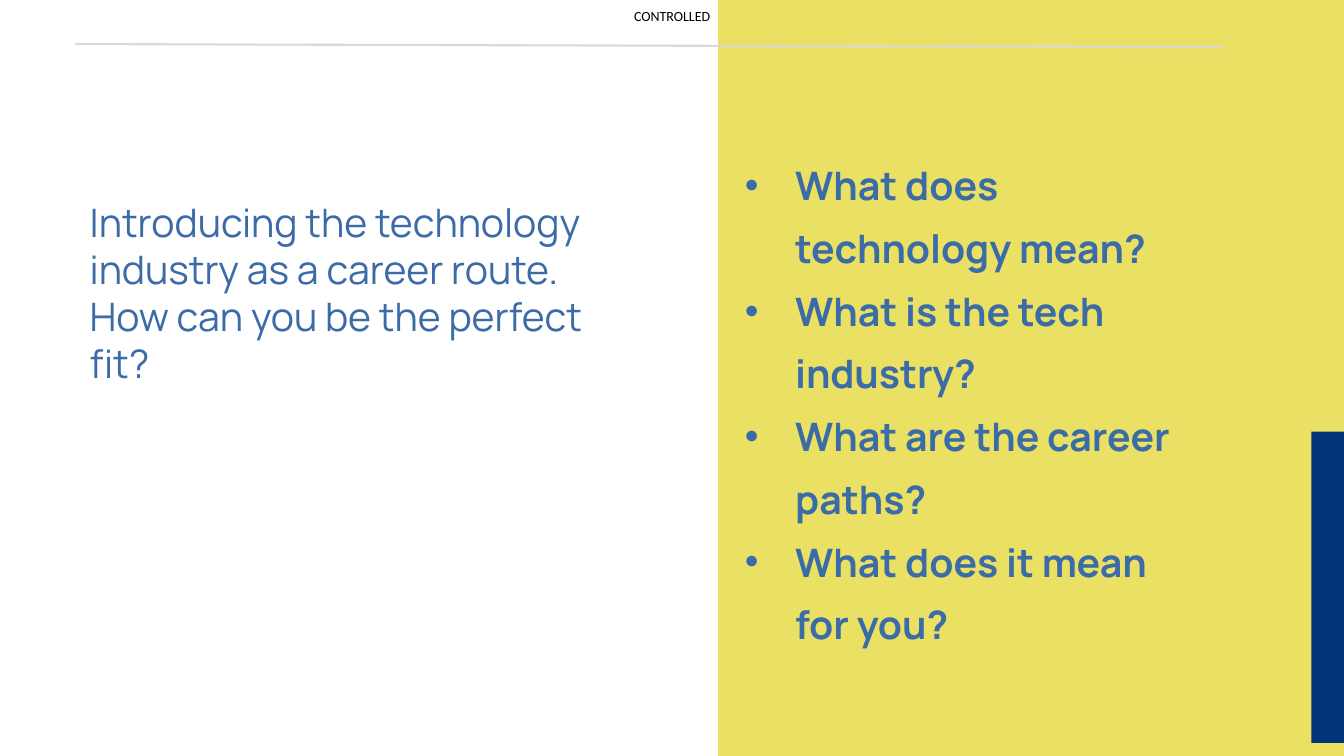
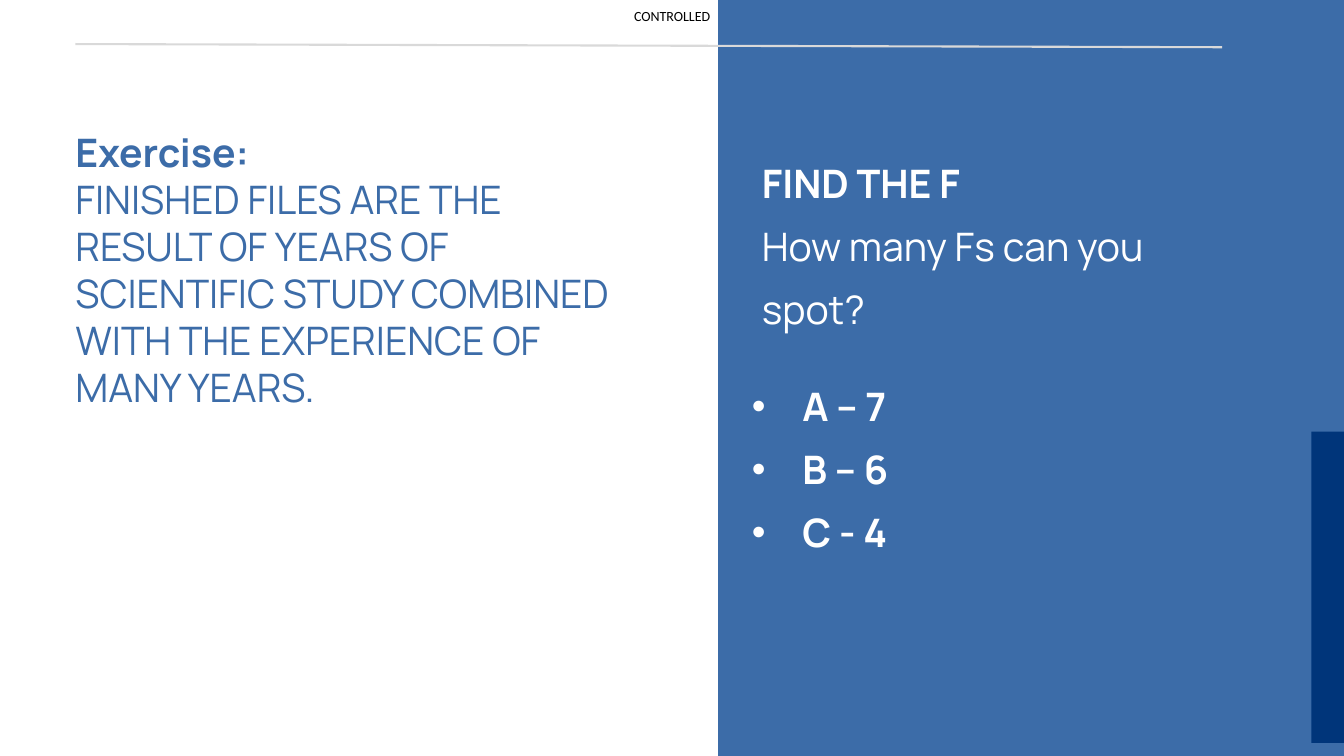
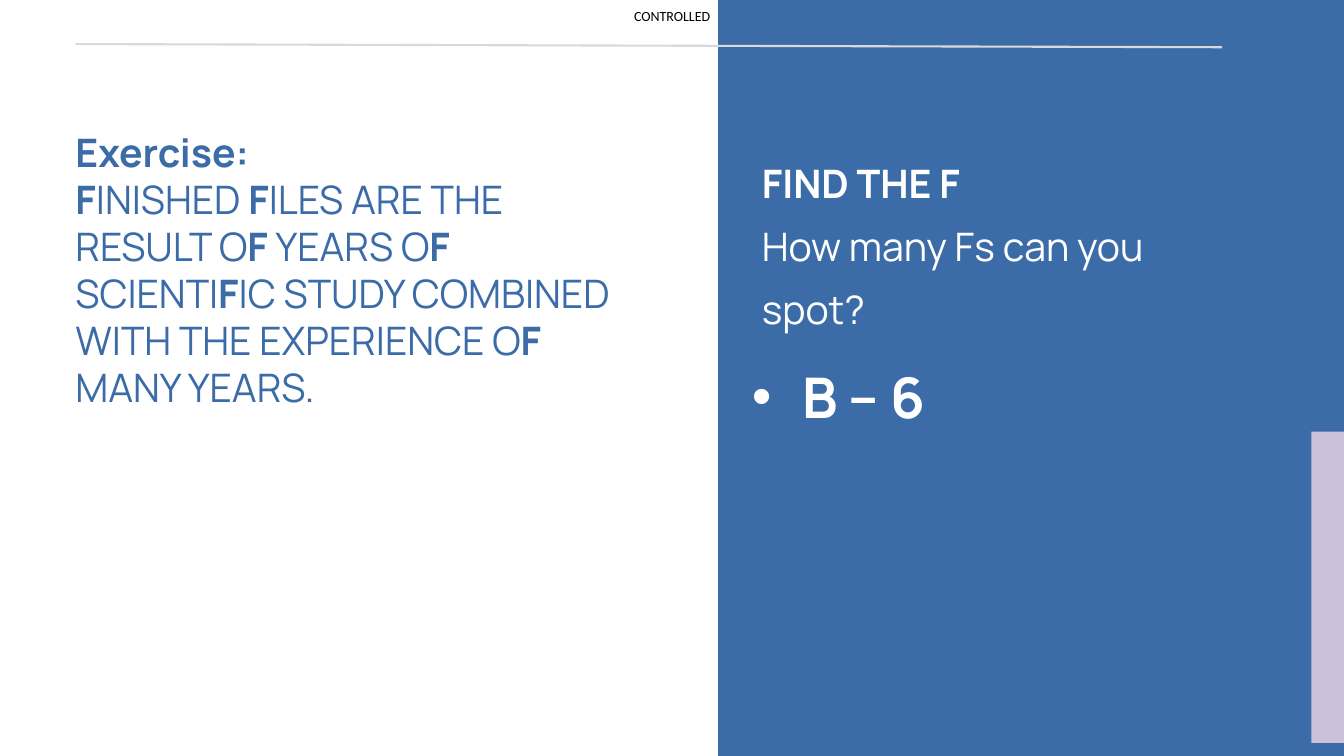
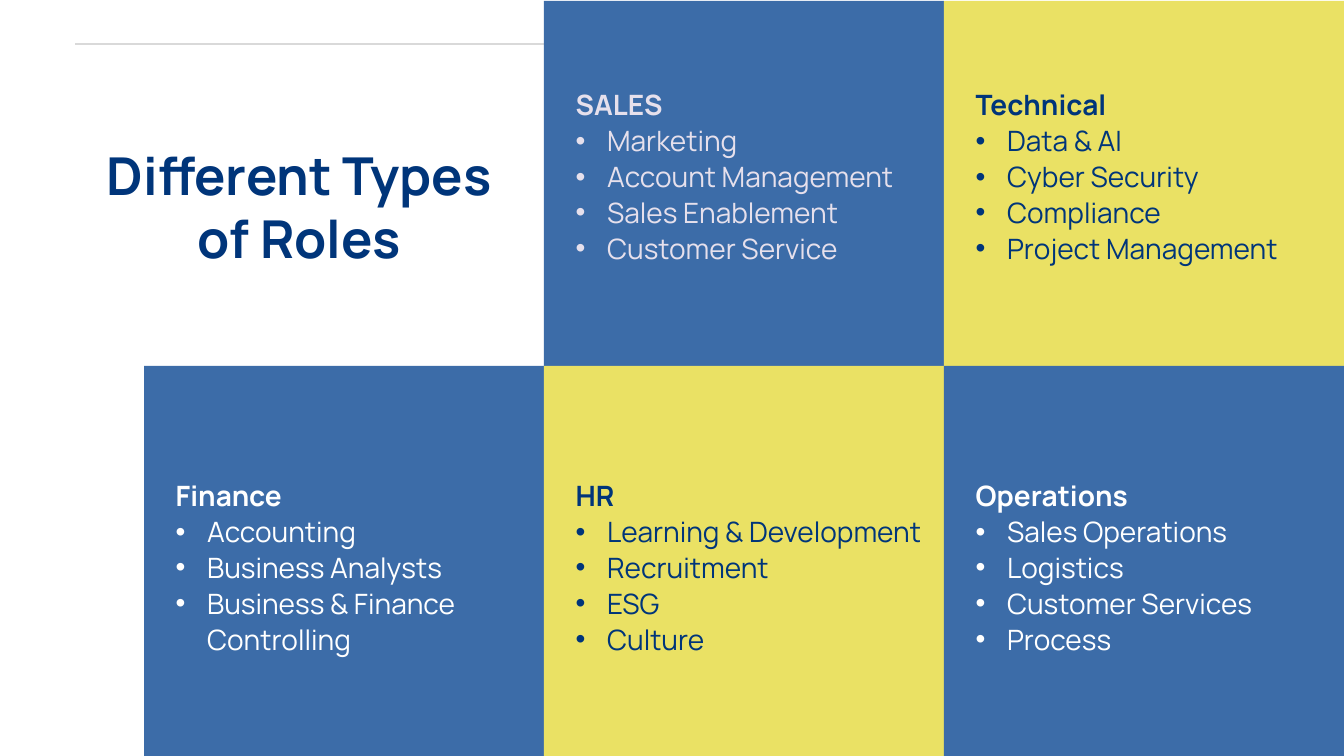
from dataclasses import dataclass

from lxml import etree
from pptx import Presentation
from pptx.dml.color import RGBColor
from pptx.enum.shapes import MSO_CONNECTOR, MSO_SHAPE
from pptx.enum.text import MSO_ANCHOR, MSO_AUTO_SIZE, PP_ALIGN
from pptx.oxml.ns import qn
from pptx.util import Cm, Pt


@dataclass(frozen=True)
class Theme:
    blue: str = "3C6CA8"
    navy: str = "00357A"
    yellow: str = "EAE164"
    lilac: str = "CCC1DA"
    pale: str = "E6E0EC"
    white: str = "FFFFFF"
    black: str = "000000"
    rule: str = "D9D9D9"
    font: str = "Manrope"
    label_font: str = "Calibri"
    label_size: float = 10
    card_size: float = 20
    text_size: float = 28
    title_size: float = 37.3
    answer_size: float = 40
    wide_spacing: float = 44.8
    card_spacing: float = 25.6


THEME = Theme()
SLIDE_WIDTH, SLIDE_HEIGHT = 33.87, 19.05

# Layout numbers in the default template
TITLE_AND_CONTENT, TWO_CONTENT, TITLE_ONLY = 1, 3, 5

EXERCISE = ("FINISHED FILES ARE THE RESULT OF YEARS OF SCIENTIFIC STUDY "
            "COMBINED WITH THE EXPERIENCE OF MANY YEARS.")


# Text
@dataclass(frozen=True)
class TextStyle:
    color: str
    size: float = THEME.text_size
    font: str = THEME.font
    spacing: float = 0
    align: int = PP_ALIGN.LEFT


@dataclass(frozen=True)
class Line:
    runs: list  # (text, bold) pairs
    bullet: bool = False
    indent: float = 0
    hanging: float = 0


def plain(text):
    return Line([(text, False)])


def bold(text, indent=0):
    return Line([(text, True)], indent=indent)


def bullet(text, is_bold=True, hanging=1.27):
    return Line([(text, is_bold)], True, 1.27, hanging)


def emphasise(text, letter):
    first, *others = text.split(letter)
    runs = [(first, False)]
    for part in others:
        runs += [(letter, True), (part, False)]
    return Line([run for run in runs if run[0]])


def set_bullet(paragraph, line):
    properties = paragraph._p.get_or_add_pPr()
    properties.set("marL", str(Cm(line.indent)))
    properties.set("indent", str(-Cm(line.hanging)))
    if line.bullet:
        etree.SubElement(properties, qn("a:buFont")).set("typeface", "Arial")
        etree.SubElement(properties, qn("a:buChar")).set("char", "•")
    else:
        etree.SubElement(properties, qn("a:buNone"))


def write_text(shape, lines, style, wrap=True):
    frame = shape.text_frame
    frame.word_wrap = wrap
    frame.auto_size = MSO_AUTO_SIZE.NONE
    frame.vertical_anchor = MSO_ANCHOR.TOP
    frame.margin_left = frame.margin_right = Cm(0)
    frame.margin_top = frame.margin_bottom = Cm(0)
    for number, line in enumerate(lines):
        paragraph = frame.add_paragraph() if number else frame.paragraphs[0]
        set_bullet(paragraph, line)
        paragraph.alignment = style.align
        paragraph.space_before = Pt(0)
        if style.spacing:
            paragraph.line_spacing = Pt(style.spacing)
        for text, is_bold in line.runs:
            run = paragraph.add_run()
            run.text = text
            run.font.name = style.font
            run.font.size = Pt(style.size)
            run.font.bold = is_bold
            run.font.color.rgb = RGBColor.from_string(style.color)


def fill_placeholder(slide, number, box, lines, style):
    placeholder = slide.placeholders[number]
    placeholder.left, placeholder.top, placeholder.width, placeholder.height = map(Cm, box)
    # Bring the text in front of the coloured panels
    slide.shapes.element.append(placeholder.element)
    write_text(placeholder, lines, style)


def add_text(slide, box, lines, style, wrap=True):
    write_text(slide.shapes.add_textbox(*map(Cm, box)), lines, style, wrap)


# Shapes
def add_block(slide, box, color):
    block = slide.shapes.add_shape(MSO_SHAPE.RECTANGLE, *map(Cm, box))
    block.shadow.inherit = False
    block.fill.solid()
    block.fill.fore_color.rgb = RGBColor.from_string(color)
    block.line.fill.background()


def add_rule(slide, end_x, end_y):
    rule = slide.shapes.add_connector(
        MSO_CONNECTOR.STRAIGHT, Cm(1.9), Cm(1.11), Cm(end_x), Cm(end_y))
    rule.line.color.rgb = RGBColor.from_string(THEME.rule)
    rule.line.width = Pt(1.5)
    etree.SubElement(rule.element.spPr, qn("a:effectLst"))


# Slides
def add_split_slide(presentation, layout, panel_color, bar_color):
    slide = presentation.slides.add_slide(presentation.slide_layouts[layout])
    add_text(slide, (15.98, 0.18, 2.01, 0.43), [plain("CONTROLLED")],
             TextStyle(THEME.black, THEME.label_size, THEME.label_font), wrap=False)
    panel_left, bar_left, bar_top = 18.1, 33.05, 10.88
    add_block(slide, (panel_left, 0, SLIDE_WIDTH - panel_left, SLIDE_HEIGHT), panel_color)
    add_rule(slide, 30.8, 1.19)
    add_block(slide, (bar_left, bar_top, SLIDE_WIDTH - bar_left, 7.84), bar_color)
    return slide


def add_intro_slide(presentation):
    slide = add_split_slide(presentation, TITLE_AND_CONTENT, THEME.yellow, THEME.navy)
    fill_placeholder(slide, 0, (2.26, 5, 13.51, 4.78), [
        plain("Introducing the technology industry as a career route."),
        plain("How can you be the perfect fit?"),
    ], TextStyle(THEME.blue))
    questions = ["What does technology mean?", "What is the tech industry?",
                 "What are the career paths?", "What does it mean for you?"]
    fill_placeholder(slide, 1, (18.77, 3.68, 10.77, 14.3),
                     [bullet(question) for question in questions],
                     TextStyle(THEME.blue, spacing=THEME.wide_spacing))


def add_exercise_slide(presentation, bar_color, sentence, answers, answer_size):
    slide = add_split_slide(presentation, TWO_CONTENT, THEME.blue, bar_color)
    fill_placeholder(slide, 0, (1.9, 3.23, 13.87, 8.38),
                     [bold("Exercise:"), sentence], TextStyle(THEME.blue))
    fill_placeholder(slide, 1, (19.2, 3.63, 9.65, 4.7),
                     [bold("FIND THE F"), plain("How many Fs can you spot?")],
                     TextStyle(THEME.white, spacing=THEME.wide_spacing))
    fill_placeholder(slide, 2, (18.95, 9.25, 10.77, 1.58 * len(answers)),
                     [bullet(answer) for answer in answers],
                     TextStyle(THEME.white, answer_size, spacing=THEME.wide_spacing))


def add_roles_slide(presentation):
    slide = presentation.slides.add_slide(presentation.slide_layouts[TITLE_ONLY])
    add_rule(slide, 31.95, 1.11)

    # Cards: column, row, fill, text colour, heading, roles
    cards = [
        (1, 0, THEME.blue, THEME.pale, "SALES",
         ["Marketing", "Account Management", "Sales Enablement", "Customer Service"]),
        (2, 0, THEME.yellow, THEME.navy, "Technical",
         ["Data & AI", "Cyber Security", "Compliance", "Project Management"]),
        (0, 1, THEME.blue, THEME.white, "Finance",
         ["Accounting", "Business Analysts", "Business & Finance Controlling"]),
        (1, 1, THEME.yellow, THEME.navy, "HR",
         ["Learning & Development", "Recruitment", "ESG", "Culture"]),
        (2, 1, THEME.blue, THEME.white, "Operations",
         ["Sales Operations", "Logistics", "Customer Services", "Process"]),
    ]
    card_width, inset = 10.08, 0.32
    first_left = SLIDE_WIDTH - 3 * card_width
    row_edges = [0.02, 9.22, SLIDE_HEIGHT]
    text_tops = [2.16, 12.01]
    for column, row, fill, color, heading, roles in cards:
        left, top = first_left + column * card_width, row_edges[row]
        add_block(slide, (left, top, card_width, row_edges[row + 1] - top), fill)
        add_text(slide, (left + inset, text_tops[row], card_width - 2 * inset, 4.6),
                 [bold(heading, indent=0.48)]
                 + [bullet(role, is_bold=False, hanging=0.79) for role in roles],
                 TextStyle(color, THEME.card_size, spacing=THEME.card_spacing))

    fill_placeholder(slide, 0, (2.26, 3.61, 10.57, 3.18), [bold("Different Types of Roles")],
                     TextStyle(THEME.navy, THEME.title_size, spacing=THEME.wide_spacing,
                               align=PP_ALIGN.CENTER))


def main():
    presentation = Presentation()
    presentation.slide_width = Cm(SLIDE_WIDTH)
    presentation.slide_height = Cm(SLIDE_HEIGHT)
    add_intro_slide(presentation)
    add_exercise_slide(presentation, THEME.navy, plain(EXERCISE),
                       ["A – 7", "B – 6", "C - 4"], THEME.text_size)
    add_exercise_slide(presentation, THEME.lilac, emphasise(EXERCISE, "F"),
                       ["B – 6"], THEME.answer_size)
    add_roles_slide(presentation)
    presentation.save("out.pptx")


if __name__ == "__main__":
    main()
